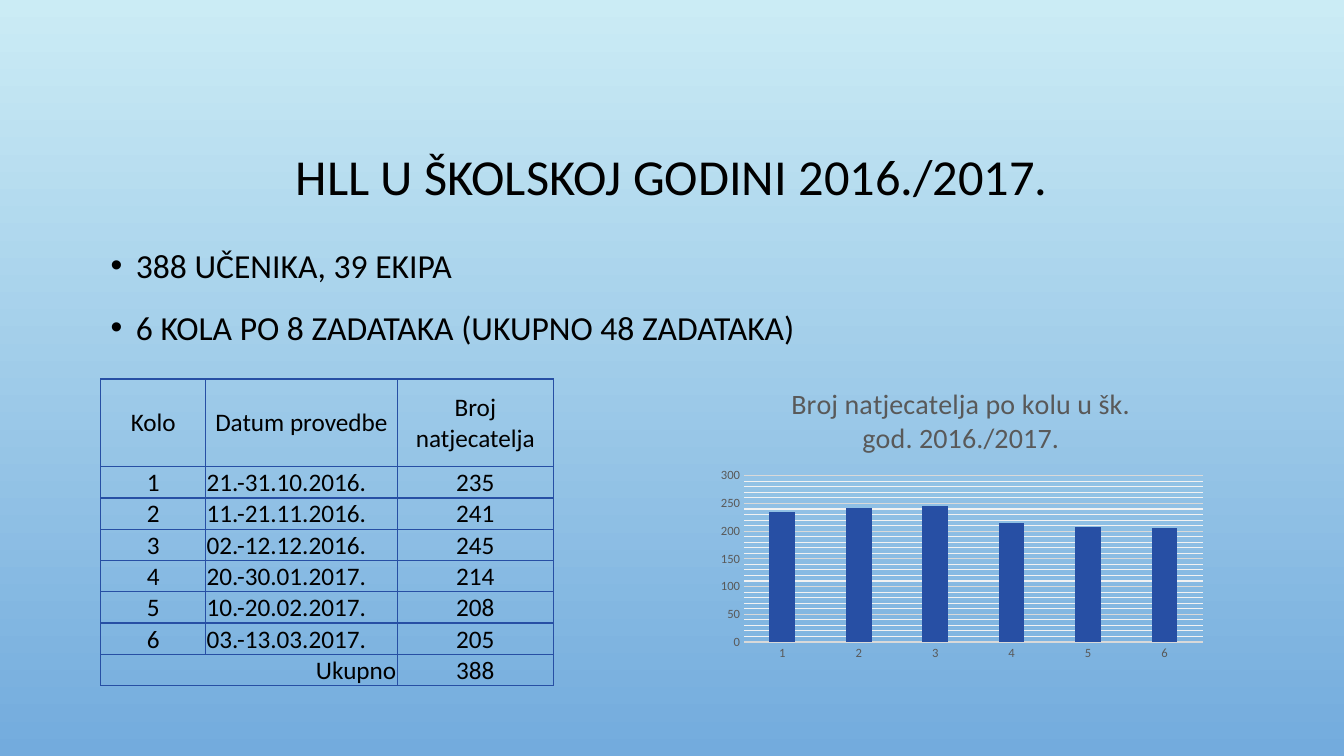
import pptx
import pptx.chart.data
import pptx.dml.color
import pptx.enum.chart
import pptx.enum.text
import pptx.oxml
import pptx.oxml.ns
import pptx.util

Inches, Pt = pptx.util.Inches, pptx.util.Pt
ALIGN = pptx.enum.text.PP_ALIGN
MIDDLE = pptx.enum.text.MSO_ANCHOR.MIDDLE
NO_TICKS = pptx.enum.chart.XL_TICK_MARK.NONE
NAMESPACES = pptx.oxml.ns.nsdecls("a", "c")
FONT = "Calibri"
COLORS = {
    "sky": "CBECF5",
    "sea": "73ABDD",
    "text": "000000",
    "accent": "274FA4",
    "chart_text": "595959",
    "grid": "D9D9D9",
    "minor_grid": "F2F2F2",
}
MARGIN = 1
CONTENT_WIDTH = 11.33


def rgb(name):
    return pptx.dml.color.RGBColor.from_string(COLORS[name])


def style(font, size, color="text"):
    font.name, font.size, font.bold = FONT, Pt(size), False
    font.color.rgb = rgb(color)


presentation = pptx.Presentation()
presentation.slide_width, presentation.slide_height = Inches(13.33), Inches(7.5)
slide = presentation.slides.add_slide(presentation.slide_layouts[6])

# Background
backdrop = slide.background.fill
backdrop.gradient()
backdrop.gradient_angle = 270
for stop, position, color in zip(backdrop.gradient_stops, (0, 1), ("sky", "sea")):
    stop.position = position
    stop.color.rgb = rgb(color)

# Title
title = slide.shapes.add_textbox(
    Inches(MARGIN), Inches(1.42), Inches(CONTENT_WIDTH), Inches(0.71)
).text_frame
title.word_wrap = True
title.vertical_anchor = MIDDLE
title.text = "HLL U ŠKOLSKOJ GODINI 2016./2017."
heading = title.paragraphs[0]
heading.alignment = ALIGN.CENTER
heading.line_spacing = 0.9
style(heading.runs[0].font, 36)

# Key facts
facts = slide.shapes.add_textbox(
    Inches(MARGIN), Inches(2.3), Inches(CONTENT_WIDTH), Inches(1.33)
).text_frame
facts.word_wrap = True
facts.text = "388 UČENIKA, 39 EKIPA\n6 KOLA PO 8 ZADATAKA (UKUPNO 48 ZADATAKA)"
for index, fact in enumerate(facts.paragraphs):
    fact.line_spacing = 1.2
    if index:
        fact.space_before = Pt(10)
    properties = fact._p.get_or_add_pPr()
    properties.set("marL", str(Inches(0.25)))
    properties.set("indent", str(-Inches(0.25)))
    for bullet in (
        f'<a:buClr {NAMESPACES}><a:srgbClr val="{COLORS["text"]}"/></a:buClr>',
        f'<a:buFont {NAMESPACES} typeface="Arial"/>',
        f'<a:buChar {NAMESPACES} char="•"/>',
    ):
        properties.append(pptx.oxml.parse_xml(bullet))
    style(fact.runs[0].font, 24)

# Rounds table
dates = ["21.-31.10.2016.", "11.-21.11.2016.", "02.-12.12.2016.",
         "20.-30.01.2017.", "10.-20.02.2017.", "03.-13.03.2017."]
competitors = [235, 241, 245, 214, 208, 205]
rounds = [str(number) for number in range(1, len(dates) + 1)]
rows = [("Kolo", "Datum provedbe", "Broj natjecatelja")]
rows += zip(rounds, dates, map(str, competitors))
rows.append(("Ukupno", "", "388"))
column_widths = [1.04, 1.9, 1.55]
row_heights = [0.87] + [0.31] * (len(rows) - 1)

table = slide.shapes.add_table(
    len(rows), len(column_widths), Inches(MARGIN), Inches(3.76),
    Inches(sum(column_widths)), Inches(sum(row_heights)),
).table
table.first_row = table.horz_banding = False
for column, width in zip(table.columns, column_widths):
    column.width = Inches(width)
for row, height in zip(table.rows, row_heights):
    row.height = Inches(height)

last = len(rows) - 1
table.cell(last, 0).merge(table.cell(last, 1))
for r, row_texts in enumerate(rows):
    for c, text in enumerate(row_texts):
        cell = table.cell(r, c)
        cell.vertical_anchor = MIDDLE
        cell.margin_left = cell.margin_top = cell.margin_right = Inches(0.01)
        cell.margin_bottom = 0
        for side in ("lnL", "lnR", "lnT", "lnB"):
            cell._tc.get_or_add_tcPr().append(pptx.oxml.parse_xml(
                f'<a:{side} {NAMESPACES} w="{Pt(1)}"><a:solidFill>'
                f'<a:srgbClr val="{COLORS["accent"]}"/></a:solidFill></a:{side}>'
            ))
        cell.fill.background()
        if cell.is_spanned:
            continue
        cell.text = text
        paragraph = cell.text_frame.paragraphs[0]
        if cell.is_merge_origin:
            paragraph.alignment = ALIGN.RIGHT
        elif c == 1 and r > 0:
            paragraph.alignment = ALIGN.JUSTIFY
        else:
            paragraph.alignment = ALIGN.CENTER
        style(paragraph.runs[0].font, 18)

# Competitors per round
chart_data = pptx.chart.data.CategoryChartData()
chart_data.categories = rounds
chart_data.add_series("Series 1", competitors)
chart = slide.shapes.add_chart(
    pptx.enum.chart.XL_CHART_TYPE.COLUMN_CLUSTERED,
    Inches(7.03), Inches(3.64), Inches(5), Inches(3), chart_data,
).chart
style(chart.font, 10)
chart.has_legend = False
chart.has_title = True
chart_title = chart.chart_title.text_frame
chart_title.text = "Broj natjecatelja po kolu u šk. god. 2016./2017."
style(chart_title.paragraphs[0].runs[0].font, 20, "chart_text")

columns = chart.plots[0]
columns.gap_width = 199
columns.vary_by_categories = False
bars = columns.series[0].format.fill
bars.solid()
bars.fore_color.rgb = rgb("accent")

for axis in (chart.category_axis, chart.value_axis):
    axis.major_tick_mark = axis.minor_tick_mark = NO_TICKS
    style(axis.tick_labels.font, 9, "chart_text")
chart.category_axis.format.line.color.rgb = rgb("grid")
chart.category_axis.format.line.width = Pt(0.75)

scale = chart.value_axis
scale.minimum_scale, scale.maximum_scale = 0, 300
scale.major_unit, scale.minor_unit = 50, 10
scale.format.line.fill.background()
scale.has_major_gridlines = scale.has_minor_gridlines = True
scale.major_gridlines.format.line.color.rgb = rgb("grid")
scale.major_gridlines.format.line.width = Pt(0.75)
minor_gridlines = scale._element.find(pptx.oxml.ns.qn("c:minorGridlines"))
minor_gridlines.append(pptx.oxml.parse_xml(
    f'<c:spPr {NAMESPACES}><a:ln w="{Pt(0.75)}"><a:solidFill>'
    f'<a:srgbClr val="{COLORS["minor_grid"]}"/></a:solidFill></a:ln></c:spPr>'
))

plot_area = chart._chartSpace.chart.plotArea
for old_layout in plot_area.findall(pptx.oxml.ns.qn("c:layout")):
    plot_area.remove(old_layout)
plot_area.insert(0, pptx.oxml.parse_xml(
    f'<c:layout {NAMESPACES}><c:manualLayout><c:layoutTarget val="inner"/>'
    '<c:xMode val="edge"/><c:yMode val="edge"/>'
    '<c:x val="0.07"/><c:y val="0.36"/><c:w val="0.91"/><c:h val="0.55"/>'
    '</c:manualLayout></c:layout>'
))

presentation.save("out.pptx")
